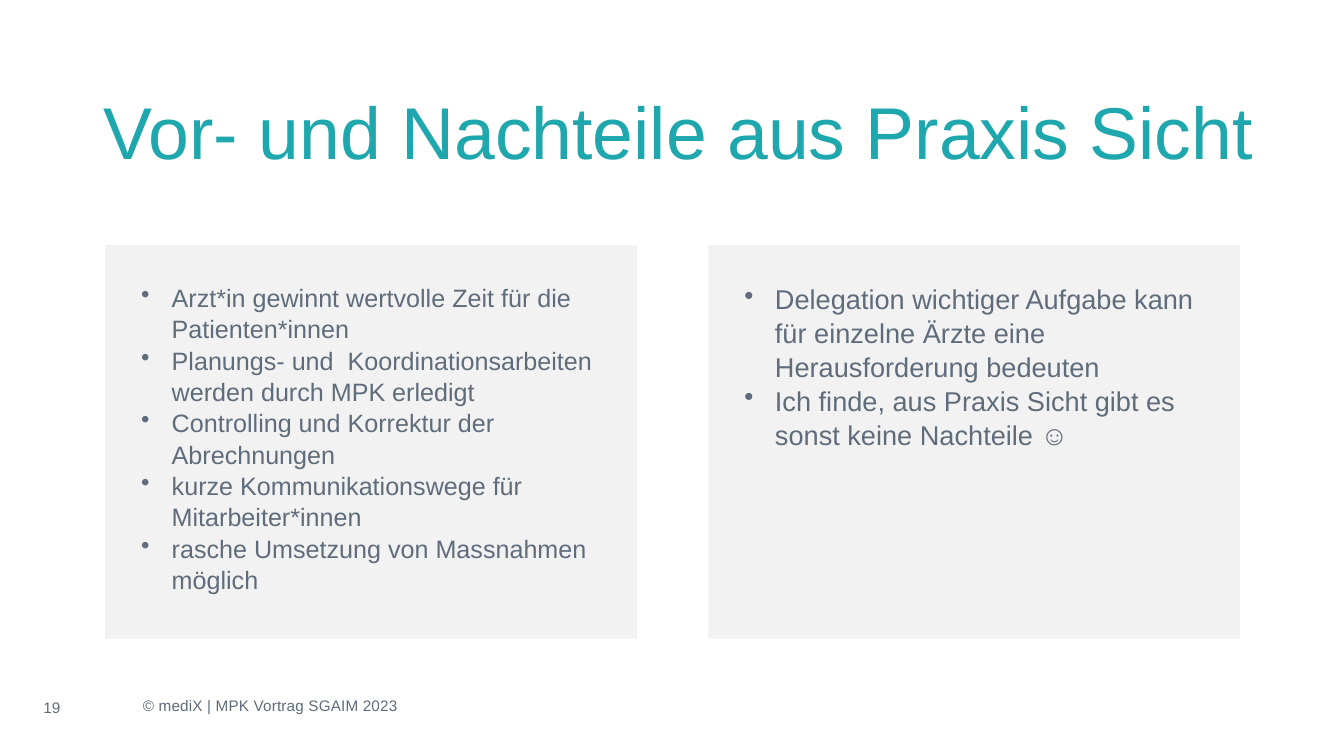
import pptx
import pptx.dml.color
import pptx.enum.shapes
import pptx.enum.text
import pptx.oxml.ns
import pptx.util
import lxml.etree

Inches = pptx.util.Inches
ALIGN = pptx.enum.text.PP_ALIGN
ANCHOR = pptx.enum.text.MSO_ANCHOR

# Content
TITLE = "Vor- und Nachteile aus Praxis Sicht"
ADVANTAGES = [
    "Arzt*in gewinnt wertvolle Zeit für die Patienten*innen",
    "Planungs- und  Koordinationsarbeiten werden durch MPK erledigt",
    "Controlling und Korrektur der Abrechnungen",
    "kurze Kommunikationswege für Mitarbeiter*innen",
    "rasche Umsetzung von Massnahmen möglich",
]
DRAWBACKS = [
    "Delegation wichtiger Aufgabe kann für einzelne Ärzte eine Herausforderung bedeuten",
    "Ich finde, aus Praxis Sicht gibt es sonst keine Nachteile ☺",
]
PANELS = [(ADVANTAGES, 29.6), (DRAWBACKS, 32)]
PAGE_NUMBER = "19"
FOOTER = "© mediX | MPK Vortrag SGAIM 2023"

# Style
COLORS = {"title": "1EA7AC", "text": "5F6C7B", "panel": "F2F2F2"}
FONT = "Arial"
PANEL_LEFT, PANEL_TOP, PANEL_WIDTH, PANEL_HEIGHT = 1.72, 4.01, 8.7, 6.44
PANEL_STEP = 9.87
PANEL_INSET = 0.59
BULLET_INDENT = 0.5


def add_bullet(para):
    properties = para._p.get_or_add_pPr()
    properties.set("marL", str(Inches(BULLET_INDENT)))
    properties.set("indent", str(-Inches(BULLET_INDENT)))
    bullet = lxml.etree.SubElement(properties, pptx.oxml.ns.qn("a:buChar"))
    bullet.set("char", "•")


def write_text(box, lines, size, color="text", align=ALIGN.LEFT, anchor=ANCHOR.TOP,
               insets=(0.1, 0.05), wrap=True, bullets=False, line_spacing=None, tracking=0):
    frame = box.text_frame
    frame.word_wrap = wrap
    frame.vertical_anchor = anchor
    frame.margin_left = frame.margin_right = Inches(insets[0])
    frame.margin_top = frame.margin_bottom = Inches(insets[1])
    for index, line in enumerate(lines):
        para = frame.add_paragraph() if index else frame.paragraphs[0]
        para.alignment = align
        if line_spacing:
            para.line_spacing = line_spacing
        if bullets:
            add_bullet(para)
        span = para.add_run()
        span.text = line
        span.font.name = FONT
        span.font.size = pptx.util.Pt(size)
        span.font.color.rgb = pptx.dml.color.RGBColor.from_string(COLORS[color])
        if tracking:
            span._r.get_or_add_rPr().set("spc", str(round(tracking * 100)))


deck = pptx.Presentation()
deck.slide_width, deck.slide_height = Inches(21.99), Inches(12.37)
page = deck.slides.add_slide(deck.slide_layouts[6])


def add_text_box(left, top, width, height):
    return page.shapes.add_textbox(Inches(left), Inches(top), Inches(width), Inches(height))


# Title
write_text(add_text_box(1.7, 0.93, 18.96, 2.39), [TITLE], 86.4, color="title",
           anchor=ANCHOR.MIDDLE, insets=(0, 0))

# Panels: advantages on the left, drawbacks on the right
for column, (points, size) in enumerate(PANELS):
    panel = page.shapes.add_shape(
        pptx.enum.shapes.MSO_SHAPE.RECTANGLE,
        Inches(PANEL_LEFT + column * PANEL_STEP), Inches(PANEL_TOP),
        Inches(PANEL_WIDTH), Inches(PANEL_HEIGHT))
    panel.shadow.inherit = False
    panel.fill.solid()
    panel.fill.fore_color.rgb = pptx.dml.color.RGBColor.from_string(COLORS["panel"])
    panel.line.fill.background()
    write_text(panel, points, size, insets=(PANEL_INSET, PANEL_INSET),
               bullets=True, line_spacing=1.04)

# Page number and footer
write_text(add_text_box(0, 11.46, 1.7, 0.24), [PAGE_NUMBER], 18,
           align=ALIGN.CENTER, anchor=ANCHOR.MIDDLE)
write_text(add_text_box(2.24, 11.35, 4.43, 0.4), [FOOTER], 18, wrap=False, tracking=0.2)

deck.save("out.pptx")
